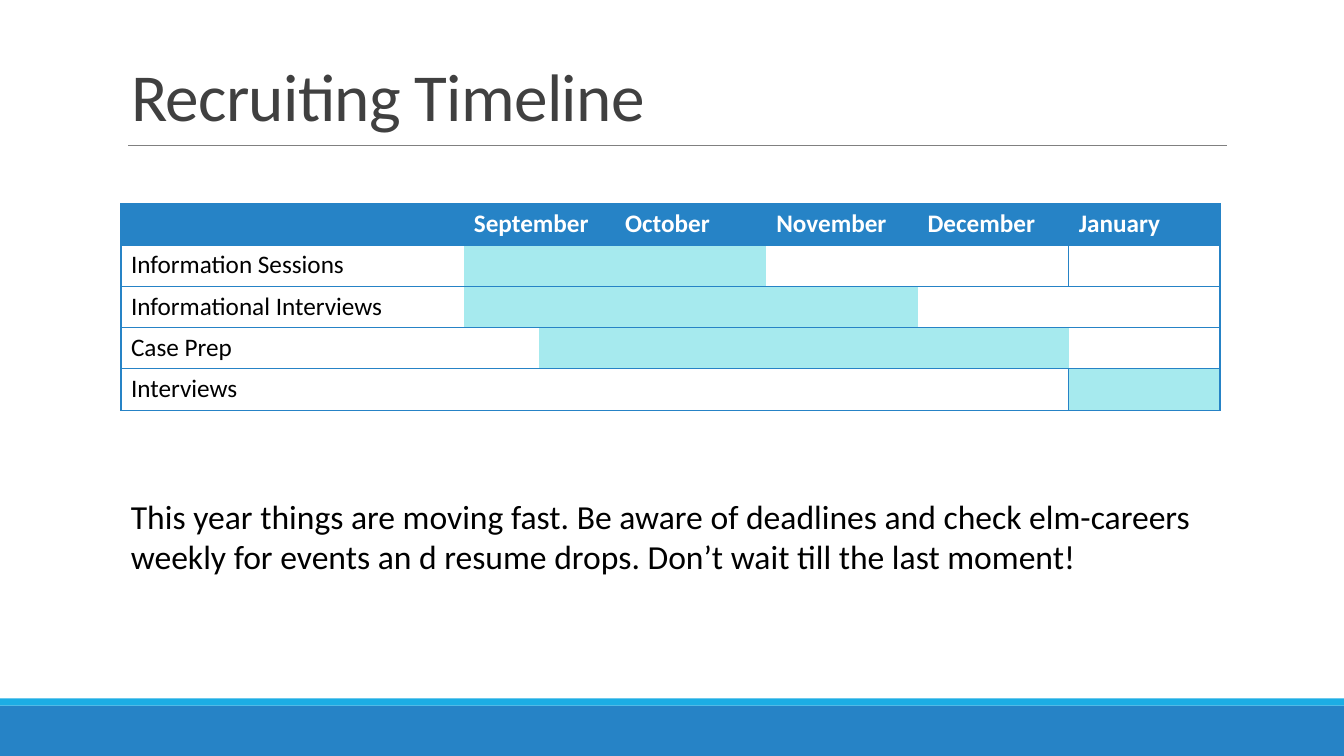
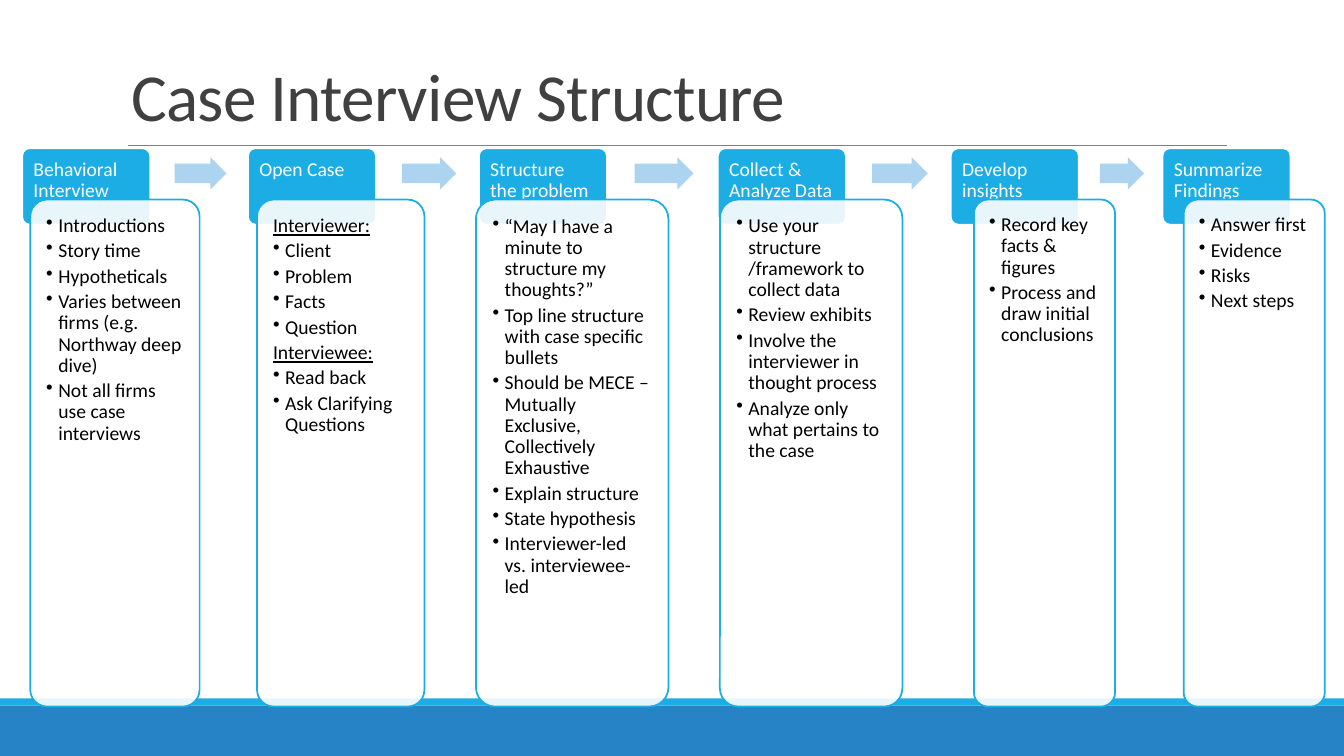
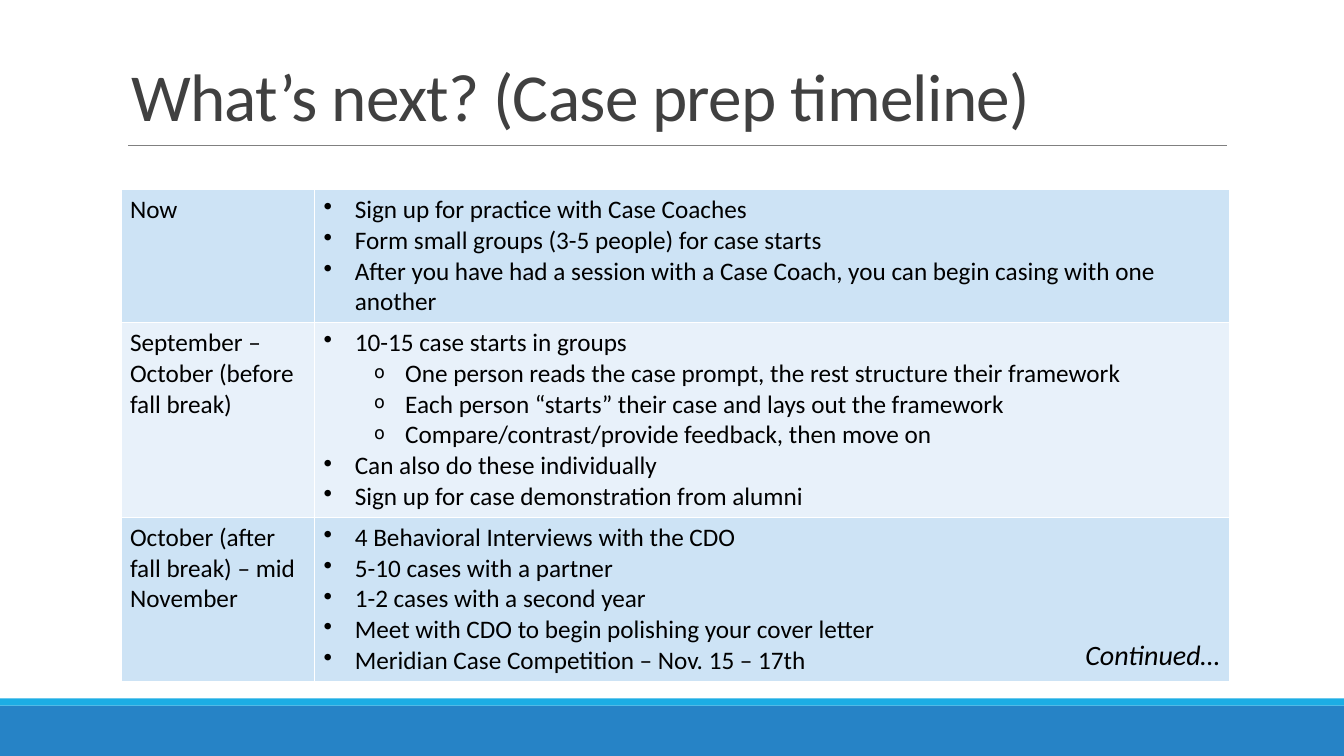
from dataclasses import dataclass

from lxml import etree
from pptx import Presentation
from pptx.dml.color import RGBColor
from pptx.enum.shapes import MSO_CONNECTOR, MSO_SHAPE
from pptx.enum.text import MSO_ANCHOR, PP_ALIGN
from pptx.oxml.ns import qn
from pptx.util import Inches, Pt

RECT = MSO_SHAPE.RECTANGLE
ROUNDED = MSO_SHAPE.ROUNDED_RECTANGLE
ARROW = MSO_SHAPE.RIGHT_ARROW
STRAIGHT = MSO_CONNECTOR.STRAIGHT
TOP, MIDDLE, BOTTOM = MSO_ANCHOR.TOP, MSO_ANCHOR.MIDDLE, MSO_ANCHOR.BOTTOM
LEFT, RIGHT = PP_ALIGN.LEFT, PP_ALIGN.RIGHT


@dataclass(frozen=True)
class Theme:
    font: str = "Calibri"
    blue: str = "2683C6"
    cyan: str = "1CADE4"
    rule: str = "808080"
    title: str = "404040"
    ink: str = "000000"
    white: str = "FFFFFF"
    active: str = "A6EAEE"
    arrow: str = "ACD3EF"
    band_dark: str = "CDE3F5"
    band_light: str = "E8F1FA"
    title_size: int = 48
    note_size: int = 24
    more_size: int = 20
    table_size: int = 18
    card_size: int = 14


T = Theme()

# Grid, in inches
W, H = 13.33, 7.5
MARGIN = 1.2
CONTENT = 11
ROW = 0.41
FOOTER, STRIPE = 0.5, 0.07


def add_text(tf, text, size, color, indent=0, hang=0, bullet=None, bullet_pct=100):
    """Add a paragraph with one run, using the empty first paragraph if there is one."""
    p = tf.paragraphs[0]
    if p.runs:
        p = tf.add_paragraph()
    r = p.add_run()
    r.text = text
    r.font.name, r.font.size = T.font, Pt(size)
    r.font.color.rgb = RGBColor.from_string(color)
    if hang:
        pPr = p._p.get_or_add_pPr()
        pPr.set("marL", str(Inches(indent)))
        pPr.set("indent", str(-Inches(hang)))
        if bullet:
            etree.SubElement(pPr, qn("a:buSzPct"), val=str(bullet_pct * 1000))
            etree.SubElement(pPr, qn("a:buChar"), char=bullet)
    return p, r


def style_cell(cell, fill, line, sides):
    """Draw the named sides (of LRTB), clear the others, then fill the cell."""
    tcPr = cell._tc.get_or_add_tcPr()
    for side in "LRTB":
        ln = etree.SubElement(tcPr, qn("a:ln" + side), w=str(Pt(1)))
        if side in sides:
            paint = etree.SubElement(ln, qn("a:solidFill"))
            etree.SubElement(paint, qn("a:srgbClr"), val=line)
        else:
            etree.SubElement(ln, qn("a:noFill"))
    if fill:
        cell.fill.solid()
        cell.fill.fore_color.rgb = RGBColor.from_string(fill)
    else:
        cell.fill.background()


prs = Presentation()
prs.slide_width, prs.slide_height = Inches(W), Inches(H)
layout = prs.slide_layouts[5]

# Slides and titles
slides = []
for title in ("Recruiting Timeline", "Case Interview Structure",
              "What’s next? (Case prep timeline)"):
    s = prs.slides.add_slide(layout)
    sp = s.shapes.title
    sp.left, sp.top = Inches(MARGIN), Inches(0.31)
    sp.width, sp.height = Inches(CONTENT), Inches(1.08)
    tf = sp.text_frame
    tf.vertical_anchor = BOTTOM
    p, r = add_text(tf, title, T.title_size, T.title)
    p.alignment, p.line_spacing = LEFT, 0.85
    r._r.get_or_add_rPr().set("spc", "-50")
    slides.append(s)

# Footer bands and title rule, moved to the shared layout
s = slides[0]
shared = []
for top, height, color in ((H - FOOTER, FOOTER, T.blue),
                           (H - FOOTER - STRIPE, STRIPE, T.cyan)):
    sp = s.shapes.add_shape(RECT, 0, Inches(top), Inches(W), Inches(height))
    sp.shadow.inherit = False
    sp.fill.solid()
    sp.fill.fore_color.rgb = RGBColor.from_string(color)
    sp.line.fill.background()
    shared.append(sp)
rule = s.shapes.add_connector(STRAIGHT, Inches(1.27), Inches(1.44),
                              Inches(12.17), Inches(1.44))
rule.line.color.rgb = RGBColor.from_string(T.rule)
rule.line.width = Pt(0.5)
etree.SubElement(rule._element.spPr, qn("a:effectLst"))
shared.append(rule)
for number, sp in enumerate(shared, 101):
    sp._element.xpath(".//p:cNvPr")[0].set("id", str(number))
    layout.shapes.element.append(sp._element)

# Slide 1: months by activity; September is split into two half columns
MONTH = 1.5
col_widths = [3.4, MONTH / 2, MONTH / 2] + [MONTH] * 4
months = {1: "September", 3: "October", 4: "November", 5: "December", 6: "January"}
activities = [  # name, active columns
    ("Information Sessions", range(1, 4)),
    ("Informational Interviews", range(1, 5)),
    ("Case Prep", range(2, 6)),
    ("Interviews", range(6, 7)),
]
table_width = sum(col_widths)
last = len(col_widths) - 1
tbl = s.shapes.add_table(len(activities) + 1, len(col_widths), Inches(MARGIN),
                         Inches(2.02), Inches(table_width), Inches(5 * ROW)).table
tbl.first_row = tbl.horz_banding = False
for col, width in zip(tbl.columns, col_widths):
    col.width = Inches(width)
for i, row in enumerate(tbl.rows):
    row.height = Inches(ROW)
    january_ruled = i in (1, 4)
    for j, cell in enumerate(row.cells):
        sides = "TB"
        if j == 0 or (j == last and january_ruled):
            sides += "L"
        if j == last or (j == last - 1 and january_ruled):
            sides += "R"
        if i == 0:
            fill = T.blue
        else:
            fill = T.active if j in activities[i - 1][1] else None
        style_cell(cell, fill, T.blue, sides)
for j, month in months.items():
    p, r = add_text(tbl.cell(0, j).text_frame, month, T.table_size, T.white)
    r.font.bold = True
for i, (name, active) in enumerate(activities, 1):
    add_text(tbl.cell(i, 0).text_frame, name, T.table_size, T.ink)
for i in (0, 1, 4):
    tbl.cell(i, 1).merge(tbl.cell(i, 2))

tf = s.shapes.add_textbox(Inches(MARGIN), Inches(4.87), Inches(table_width),
                          Inches(0.91)).text_frame
tf.word_wrap = True
add_text(tf, "This year things are moving fast. Be aware of deadlines and check "
         "elm-careers weekly for events an d resume drops. Don’t wait till the "
         "last moment!", T.note_size, T.ink)

# Slide 2: six steps, each a tab with a card over it
s = slides[1]
TAB_TOP, TAB_W, TAB_H = 1.47, 1.27, 0.76
CARD_TOP, CARD_H = 1.98, 5.03
steps = [  # tab left, card left, card width, heading, lines
    (0.22, 0.3, 1.68, "Behavioral Interview",
     ["Introductions", "Story time", "Hypotheticals",
      "Varies between firms (e.g. Northway deep dive)",
      "Not all firms use case interviews"]),
    (2.46, 2.55, 1.66, "Open Case",
     ["Interviewer:", "Client", "Problem", "Facts", "Question",
      "Interviewee:", "Read back", "Ask Clarifying Questions"]),
    (4.75, 4.72, 1.91, "Structure the problem",
     ["“May I have a minute to structure my thoughts?”",
      "Top line structure with case specific bullets",
      "Should be MECE – Mutually Exclusive, Collectively Exhaustive",
      "Explain structure", "State hypothesis",
      "Interviewer-led vs. interviewee-led"]),
    (7.12, 7.14, 1.81, "Collect & Analyze Data",
     ["Use your structure /framework to collect data", "Review exhibits",
      "Involve the interviewer in thought process",
      "Analyze only what pertains to the case"]),
    (9.43, 9.66, 1.4, "Develop insights",
     ["Record key facts & figures", "Process and draw initial conclusions"]),
    (11.53, 11.74, 1.4, "Summarize Findings",
     ["Answer first", "Evidence", "Risks", "Next steps"]),
]
for i, (tab_left, card_left, card_width, heading, lines) in enumerate(steps):
    tab = s.shapes.add_shape(ROUNDED, Inches(tab_left), Inches(TAB_TOP),
                             Inches(TAB_W), Inches(TAB_H))
    card = s.shapes.add_shape(ROUNDED, Inches(card_left), Inches(CARD_TOP),
                              Inches(card_width), Inches(CARD_H))
    for sp, fill, line, inset in ((tab, T.cyan, T.white, 0.09),
                                  (card, T.white, T.cyan, 0.11)):
        sp.shadow.inherit = False
        sp.adjustments[0] = 0.1
        sp.fill.solid()
        sp.fill.fore_color.rgb = RGBColor.from_string(fill)
        sp.line.color.rgb = RGBColor.from_string(line)
        sp.line.width = Pt(1.25)
        tf = sp.text_frame
        tf.word_wrap, tf.vertical_anchor = True, TOP
        tf.margin_left = tf.margin_right = Inches(inset)
        tf.margin_top = tf.margin_bottom = Inches(inset)
    clr = card._element.spPr.find(qn("a:solidFill")).find(qn("a:srgbClr"))
    etree.SubElement(clr, qn("a:alpha"), val="90000")

    add_text(tab.text_frame, heading, T.card_size, T.white)
    for line in lines:
        is_label = line.endswith(":")
        p, r = add_text(card.text_frame, line, T.card_size, T.ink, 0.12, 0.12,
                        None if is_label else "•")
        if is_label:
            r.font.underline = True
    for p in tab.text_frame.paragraphs + card.text_frame.paragraphs:
        p.alignment, p.line_spacing, p.space_after = LEFT, 0.9, Pt(3)

    # Arrow across the gap to the next tab
    if i < len(steps) - 1:
        tab_right = tab_left + TAB_W
        gap = steps[i + 1][0] - tab_right
        sp = s.shapes.add_shape(ARROW, Inches(tab_right + 0.25 * gap), Inches(1.56),
                                Inches(0.53 * gap), Inches(0.32))
        sp.shadow.inherit = False
        sp.adjustments[0], sp.adjustments[1] = 0.6, 0.5
        sp.fill.solid()
        sp.fill.fore_color.rgb = RGBColor.from_string(T.arrow)
        sp.line.fill.background()

# Slide 3: periods and tasks
s = slides[2]
PERIOD_W = 1.92
periods = [  # period, row height, (level, task)
    ("Now", 1.31,
     [(0, "Sign up for practice with Case Coaches"),
      (0, "Form small groups (3-5 people) for case starts"),
      (0, "After you have had a session with a Case Coach, you can begin casing "
          "with one another")]),
    ("September – October (before fall break)", 1.92,
     [(0, "10-15 case starts in groups"),
      (1, "One person reads the case prompt, the rest structure their framework"),
      (1, "Each person “starts” their case and lays out the framework"),
      (1, "Compare/contrast/provide feedback, then move on"),
      (0, "Can also do these individually"),
      (0, "Sign up for case demonstration from alumni")]),
    ("October (after fall break) – mid November", 1.63,
     [(0, "4 Behavioral Interviews with the CDO"),
      (0, "5-10 cases with a partner"),
      (0, "1-2 cases with a second year"),
      (0, "Meet with CDO to begin polishing your cover letter"),
      (0, "Meridian Case Competition – Nov. 15 – 17th")]),
]
tbl = s.shapes.add_table(len(periods), 2, Inches(MARGIN), Inches(1.88),
                         Inches(CONTENT), Inches(4.86)).table
tbl.first_row = tbl.horz_banding = False
tbl.columns[0].width = Inches(PERIOD_W)
tbl.columns[1].width = Inches(CONTENT - PERIOD_W)
for i, (period, height, tasks) in enumerate(periods):
    tbl.rows[i].height = Inches(height)
    for cell in tbl.rows[i].cells:
        style_cell(cell, T.band_light if i % 2 else T.band_dark, T.white, "LRTB")
        cell.margin_left = cell.margin_right = Inches(0.09)
        cell.margin_top = cell.margin_bottom = Inches(0.05)
    add_text(tbl.cell(i, 0).text_frame, period, T.table_size, T.ink)
    for level, task in tasks:
        bullet, pct = ("o", 70) if level else ("•", 100)
        p, r = add_text(tbl.cell(i, 1).text_frame, task, T.table_size, T.ink,
                        0.31 + 0.5 * level, 0.31, bullet, pct)
        p.level = level

tf = s.shapes.add_textbox(Inches(1.11), Inches(6.23), Inches(11.09),
                          Inches(0.56)).text_frame
tf.word_wrap, tf.vertical_anchor = True, MIDDLE
p, r = add_text(tf, "Continued…", T.more_size, T.ink)
p.alignment, p.line_spacing = RIGHT, 0.9
p.space_before, p.space_after = Pt(12), Pt(2)
r.font.italic = True

prs.save("out.pptx")
